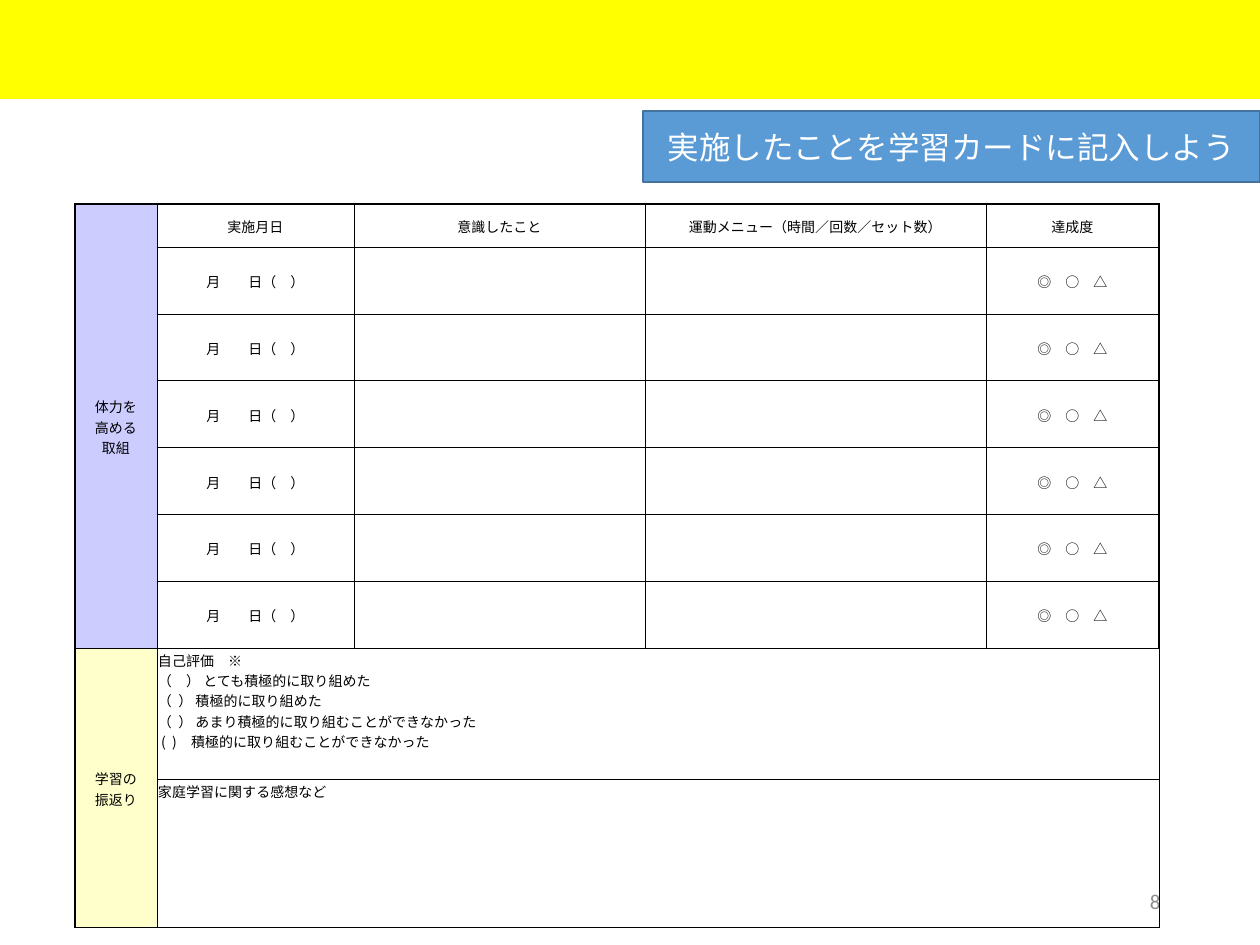
from lxml.etree import SubElement
from pptx import Presentation
from pptx.dml.color import RGBColor
from pptx.enum.shapes import MSO_SHAPE as Shape
from pptx.enum.text import MSO_ANCHOR as Anchor, PP_ALIGN as Align
from pptx.oxml.ns import qn
from pptx.util import Emu, Pt

COLORS = {
    "band": "FFFF00", "title": "5B9BD5", "edge": "43739E",
    "effort": "CCCCFF", "review": "FFFFCC",
    "ink": "000000", "white": "FFFFFF", "number": "8C8C8C",
}
FONT = "Noto Sans CJK JP"

TITLE = "実施したことを学習カードに記入しよう"
PAGE = "8"
EFFORT = ["体力を", "高める", "取組"]
REVIEW = ["学習の", "振返り"]
HEADS = ["実施月日", "意識したこと", "運動メニュー（時間／回数／セット数）", "達成度"]
ENTRY = ["月　　日（　）", "", "", "◎　○　△"]
RATING = [
    "自己評価　※",
    "（　） とても積極的に取り組めた",
    "（  ） 積極的に取り組めた",
    "（  ） あまり積極的に取り組むことができなかった",
    " (  )　積極的に取り組むことができなかった",
]
COMMENT = ["家庭学習に関する感想など"]

DAYS = 6
SPLIT = DAYS + 1  # first row of the review part
COLS = [82, 197, 291, 341, 173]
ROWS = [43] + [67] * DAYS + [131, 148]
LAST_ROW, LAST_COL = len(ROWS) - 1, len(COLS) - 1
THIN, THICK = Pt(0.5), Pt(1)


def px(n):
    return Emu(round(n * 914400 / 126))


def rgb(name):
    return RGBColor.from_string(COLORS[name])


def write(frame, lines, size, color, align, font=FONT):
    """Set the lines as one paragraph with line breaks."""
    frame.text = "\v".join(lines)
    para = frame.paragraphs[0]
    para.alignment = align
    para.font.size = Pt(size)
    para.font.name = font
    para.font.color.rgb = rgb(color)
    props = para._p.pPr.find(qn("a:defRPr"))
    SubElement(props, qn("a:ea"), typeface=font)


def add_box(slide, place, fill, edge=None):
    box = slide.shapes.add_shape(Shape.RECTANGLE, *map(px, place))
    box.shadow.inherit = False
    box.fill.solid()
    box.fill.fore_color.rgb = rgb(fill)
    if edge:
        box.line.color.rgb = rgb(edge)
        box.line.width = Pt(1)
    else:
        box.line.fill.background()
    return box


def add_edges(cell, row, col):
    """Draw thick lines around the two parts and thin ones inside."""
    thick = {
        "L": col == 0,
        "R": col == LAST_COL,
        "T": row in (0, SPLIT),
        "B": row in (SPLIT - 1, LAST_ROW),
    }
    props = cell._tc.get_or_add_tcPr()
    for side, bold in thick.items():
        line = SubElement(props, qn(f"a:ln{side}"), w=str(THICK if bold else THIN))
        fill = SubElement(line, qn("a:solidFill"))
        SubElement(fill, qn("a:srgbClr"), val=COLORS["ink"])


def add_card(slide):
    frame = slide.shapes.add_table(
        len(ROWS), len(COLS), px(75), px(204), px(sum(COLS)), px(sum(ROWS)))
    table = frame.table
    table.first_row = table.horz_banding = False
    for col, width in zip(table.columns, COLS):
        col.width = px(width)
    for row, height in zip(table.rows, ROWS):
        row.height = px(height)

    for r in range(len(ROWS)):
        for c in range(len(COLS)):
            cell = table.cell(r, c)
            add_edges(cell, r, c)
            cell.fill.background()
            cell.margin_left = cell.margin_right = cell.margin_top = px(1)
            cell.margin_bottom = 0
            cell.vertical_anchor = Anchor.MIDDLE

    for top, end, lines, fill in [
        (0, SPLIT - 1, EFFORT, "effort"),
        (SPLIT, LAST_ROW, REVIEW, "review"),
    ]:
        cell = table.cell(top, 0)
        cell.merge(table.cell(end, 0))
        cell.fill.solid()
        cell.fill.fore_color.rgb = rgb(fill)
        write(cell.text_frame, lines, 8, "ink", Align.CENTER)

    for r, texts in enumerate([HEADS] + [ENTRY] * DAYS):
        for c, text in enumerate(texts, 1):
            if text:
                write(table.cell(r, c).text_frame, [text], 8, "ink", Align.CENTER)

    for r, lines in enumerate([RATING, COMMENT], SPLIT):
        cell = table.cell(r, 1)
        cell.merge(table.cell(r, LAST_COL))
        cell.vertical_anchor = Anchor.TOP
        write(cell.text_frame, lines, 8, "ink", Align.LEFT)


def main():
    deck = Presentation()
    deck.slide_width, deck.slide_height = px(1260), px(945)
    slide = deck.slides.add_slide(deck.slide_layouts[6])

    add_box(slide, (-2, 0, 1262, 99), "band")

    number = slide.shapes.add_textbox(*map(px, (890, 876, 283, 50))).text_frame
    number.word_wrap = True
    number.vertical_anchor = Anchor.MIDDLE
    write(number, [PAGE], 12, "number", Align.RIGHT, "Calibri")

    add_card(slide)

    title = add_box(slide, (643, 111, 617, 71), "title", "edge").text_frame
    title.vertical_anchor = Anchor.MIDDLE
    write(title, [TITLE], 18, "white", Align.CENTER)

    deck.save("out.pptx")


if __name__ == "__main__":
    main()
